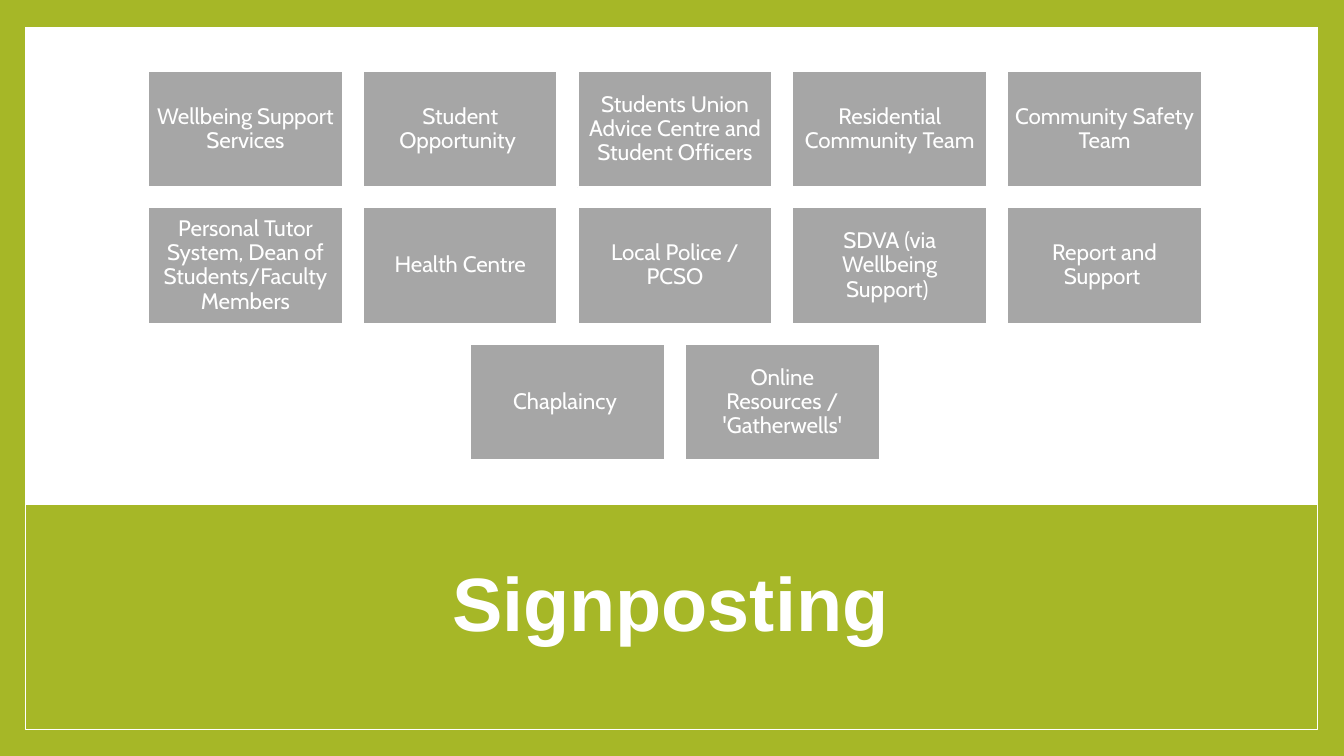
from dataclasses import dataclass

from pptx import Presentation
from pptx.dml.color import RGBColor
from pptx.enum.shapes import MSO_SHAPE
from pptx.enum.text import MSO_ANCHOR, PP_ALIGN
from pptx.util import Inches, Pt

RECTANGLE = MSO_SHAPE.RECTANGLE
MIDDLE = MSO_ANCHOR.MIDDLE
CENTER = PP_ALIGN.CENTER


@dataclass(frozen=True)
class Theme:
    green: RGBColor = RGBColor(0xA6, 0xB7, 0x27)
    grey: RGBColor = RGBColor(0xA6, 0xA6, 0xA6)
    white: RGBColor = RGBColor(0xFF, 0xFF, 0xFF)
    heading_font: str = "Arial"
    service_font: str = "Cabin"
    heading_size: int = 54
    service_size: int = 16


@dataclass(frozen=True)
class Box:
    left: float
    top: float
    width: float
    height: float

    def emu(self) -> tuple:
        return tuple(Inches(n) for n in (self.left, self.top, self.width, self.height))


@dataclass(frozen=True)
class Panel:
    box: Box
    fill: RGBColor
    line_width: float = 0


@dataclass(frozen=True)
class ServiceGrid:
    center: float = 6.695
    top: float = 0.7
    width: float = 1.93
    height: float = 1.16
    column_step: float = 2.13
    row_step: float = 1.355

    def cell(self, row: int, column: int, count: int) -> Box:
        """Place a cell in a row whose cells are centred together."""
        row_width = self.width + (count - 1) * self.column_step
        left = self.center - row_width / 2 + column * self.column_step
        return Box(left, self.top + row * self.row_step, self.width, self.height)


THEME = Theme()
SLIDE = Box(0, 0, 13.33, 7.5)
FRAME = Box(0.25, 0.27, 12.82, 6.97)
BAND = Box(FRAME.left, 5, FRAME.width, 2.24)
HEADING = Box(1.25, 5.28, 10.8, 1.48)

PANELS = (
    Panel(SLIDE, THEME.green),
    Panel(FRAME, THEME.white),
    Panel(BAND, THEME.green, 1),
)
SERVICES = (
    (
        "Wellbeing Support Services",
        "Student Opportunity ",
        "Students Union Advice Centre and Student Officers",
        "Residential Community Team",
        "Community Safety Team",
    ),
    (
        "Personal Tutor System, Dean of Students/Faculty Members",
        "Health Centre",
        "Local Police / PCSO",
        "SDVA (via Wellbeing Support) ",
        "Report and Support ",
    ),
    ("Chaplaincy ", "Online Resources / 'Gatherwells'"),
)

HEADING_FORMAT = {"name": THEME.heading_font, "size": Pt(THEME.heading_size), "bold": True}
SERVICE_FORMAT = {"name": THEME.service_font, "size": Pt(THEME.service_size), "bold": False}
SERVICE_MARGINS = {
    f"margin_{side}": Inches(0.07) for side in ("left", "top", "right", "bottom")
}


def set_all(target, values: dict) -> None:
    for name, value in values.items():
        setattr(target, name, value)


def add_panel(slide, panel: Panel):
    shape = slide.shapes.add_shape(RECTANGLE, *panel.box.emu())
    shape.shadow.inherit = False
    shape.fill.solid()
    shape.fill.fore_color.rgb = panel.fill
    if panel.line_width:
        shape.line.color.rgb = THEME.white
        shape.line.width = Pt(panel.line_width)
    else:
        shape.line.fill.background()
    return shape


def write(shape, text: str, font_format: dict, margins: dict) -> None:
    frame = shape.text_frame
    set_all(frame, {"word_wrap": True, "vertical_anchor": MIDDLE, **margins})
    paragraph = frame.paragraphs[0]
    set_all(paragraph, {"alignment": CENTER, "line_spacing": 0.9})
    run = paragraph.add_run()
    run.text = text
    set_all(run.font, font_format)
    run.font.color.rgb = THEME.white


def main() -> None:
    deck = Presentation()
    set_all(deck, {"slide_width": Inches(SLIDE.width), "slide_height": Inches(SLIDE.height)})
    slide = deck.slides.add_slide(deck.slide_layouts[6])

    # Green surround, white frame and heading band
    for panel in PANELS:
        add_panel(slide, panel)

    # Heading
    heading = slide.shapes.add_textbox(*HEADING.emu())
    write(heading, "Signposting", HEADING_FORMAT, {})

    # Support services
    grid = ServiceGrid()
    for row, services in enumerate(SERVICES):
        for column, service in enumerate(services):
            cell = grid.cell(row, column, len(services))
            tile = add_panel(slide, Panel(cell, THEME.grey, 1.5))
            write(tile, service, SERVICE_FORMAT, SERVICE_MARGINS)

    deck.save("out.pptx")


if __name__ == "__main__":
    main()
